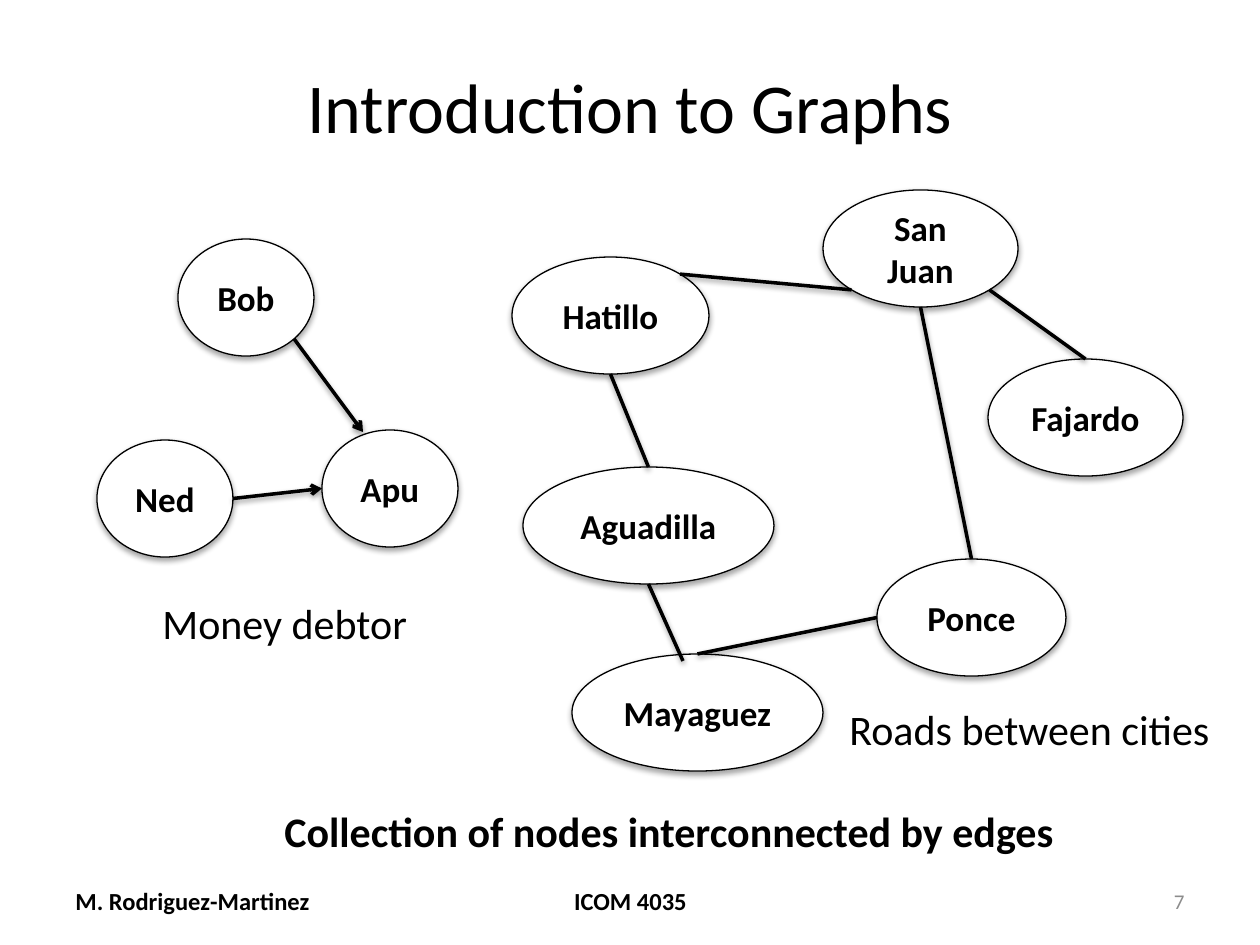
"""Build a slide that introduces graphs with a debtor graph and a road graph."""
import math

from pptx import Presentation
from pptx import util as u
from pptx.dml.color import RGBColor
from pptx.enum import shapes, text
from pptx.oxml.ns import qn
from lxml import etree

EMU_PER_PX = 914400 / 126
FONT = "Calibri"
BLACK, WHITE, GRAY = "000000", "FFFFFF", "8C8C8C"
LEFT, CENTER, RIGHT = text.PP_ALIGN.LEFT, text.PP_ALIGN.CENTER, text.PP_ALIGN.RIGHT
TOP, MIDDLE = text.MSO_ANCHOR.TOP, text.MSO_ANCHOR.MIDDLE

# text, (left, top, width, height), size, bold, colour, alignment, anchor, wrap
LABELS = [
    ("Introduction to Graphs", (63, 38, 1134, 135), 40, False, BLACK, CENTER, MIDDLE, True),
    ("M. Rodriguez-Martinez", (63, 876, 294, 50), 14, True, BLACK, LEFT, MIDDLE, True),
    ("ICOM 4035", (431, 876, 399, 50), 14, True, BLACK, CENTER, MIDDLE, True),
    ("7", (903, 876, 294, 50), 12, False, GRAY, RIGHT, MIDDLE, True),
    ("Collection of nodes interconnected by edges", (272, 799, 805, 63), 24, True, BLACK, LEFT, TOP, False),
    ("Money debtor", (150, 591, 273, 63), 24, False, BLACK, LEFT, TOP, False),
    ("Roads between cities", (837, 697, 391, 63), 24, False, BLACK, LEFT, TOP, False),
]

NODE_HEIGHT = 117
# name: (left, top, width)
NODES = {
    "Bob": (178, 239, 136),
    "Ned": (97, 440, 136),
    "Apu": (322, 430, 136),
    "San Juan": (823, 190, 195),
    "Ponce": (877, 559, 189),
    "Hatillo": (512, 257, 197),
    "Fajardo": (988, 359, 195),
    "Mayaguez": (572, 654, 251),
    "Aguadilla": (523, 467, 251),
}

SITES = ["top", "top left", "left", "bottom left", "bottom", "bottom right", "right", "top right"]
# each end is (node, site) or a free point (x, y); then whether it has an arrowhead
EDGES = [
    (("Bob", "bottom right"), (363, 432), True),
    (("Ned", "right"), ("Apu", "left"), True),
    (("San Juan", "bottom left"), ("Hatillo", "top right"), False),
    (("San Juan", "bottom right"), ("Fajardo", "top"), False),
    (("San Juan", "bottom"), ("Ponce", "top"), False),
    (("Ponce", "left"), ("Mayaguez", "top"), False),
    (("Aguadilla", "top"), ("Hatillo", "bottom"), False),
    ((683, 661), ("Aguadilla", "bottom"), False),
]


def px(*lengths):
    return [u.Emu(round(length * EMU_PER_PX)) for length in lengths]


def colour(value):
    return RGBColor.from_string(value)


def write(shape, content, size, bold, font_colour, alignment, anchor, wrap):
    frame = shape.text_frame
    frame.text = content
    frame.word_wrap = wrap
    frame.vertical_anchor = anchor
    paragraph = frame.paragraphs[0]
    paragraph.alignment = alignment
    font = paragraph.runs[0].font
    font.name, font.size, font.bold = FONT, u.Pt(size), bold
    font.color.rgb = colour(font_colour)


def add_shadow(shape, distance, opacity):
    properties = shape._element.spPr
    for old in properties.findall(qn("a:effectLst")):
        properties.remove(old)
    effects = etree.SubElement(properties, qn("a:effectLst"))
    shadow = etree.SubElement(effects, qn("a:outerShdw"), blurRad="40000", dist=str(distance),
                              dir="5400000", rotWithShape="0")
    shade = etree.SubElement(shadow, qn("a:srgbClr"), val=BLACK)
    etree.SubElement(shade, qn("a:alpha"), val=str(opacity * 1000))


def add_node(slide, name):
    left, top, width = NODES[name]
    node = slide.shapes.add_shape(shapes.MSO_SHAPE.OVAL, *px(left, top, width, NODE_HEIGHT))
    node.fill.solid()
    node.fill.fore_color.rgb = colour(WHITE)
    node.line.color.rgb = colour(BLACK)
    node.line.width = u.Pt(0.75)
    add_shadow(node, 23000, 35)
    write(node, name, 20, True, BLACK, CENTER, MIDDLE, True)
    return node


def locate(end):
    """Return the point of an edge's end, with sites spaced evenly round the oval."""
    if end[0] not in NODES:
        return end
    left, top, width = NODES[end[0]]
    angle = SITES.index(end[1]) * math.pi / 4
    return (left + width / 2 * (1 - math.sin(angle)),
            top + NODE_HEIGHT / 2 * (1 - math.cos(angle)))


def add_edge(slide, nodes, begin, end, arrow):
    edge = slide.shapes.add_connector(shapes.MSO_CONNECTOR.STRAIGHT, *px(*locate(begin), *locate(end)))
    edge.line.color.rgb = colour(BLACK)
    edge.line.width = u.Pt(2)
    if arrow:
        etree.SubElement(edge.line._get_or_add_ln(), qn("a:tailEnd"), type="arrow")
    add_shadow(edge, 20000, 38)
    joints = edge._element.find(".//" + qn("p:cNvCxnSpPr"))
    for tag, (name, site) in (("a:stCxn", begin), ("a:endCxn", end)):
        if name in nodes:
            etree.SubElement(joints, qn(tag), id=str(nodes[name].shape_id), idx=str(SITES.index(site)))


def main():
    presentation = Presentation()
    presentation.slide_width, presentation.slide_height = px(1260, 945)
    slide = presentation.slides.add_slide(presentation.slide_layouts[6])
    for content, box, *style in LABELS:
        write(slide.shapes.add_textbox(*px(*box)), content, *style)
    nodes = {name: add_node(slide, name) for name in NODES}
    for begin, end, arrow in EDGES:
        add_edge(slide, nodes, begin, end, arrow)
    presentation.save("out.pptx")


if __name__ == "__main__":
    main()
